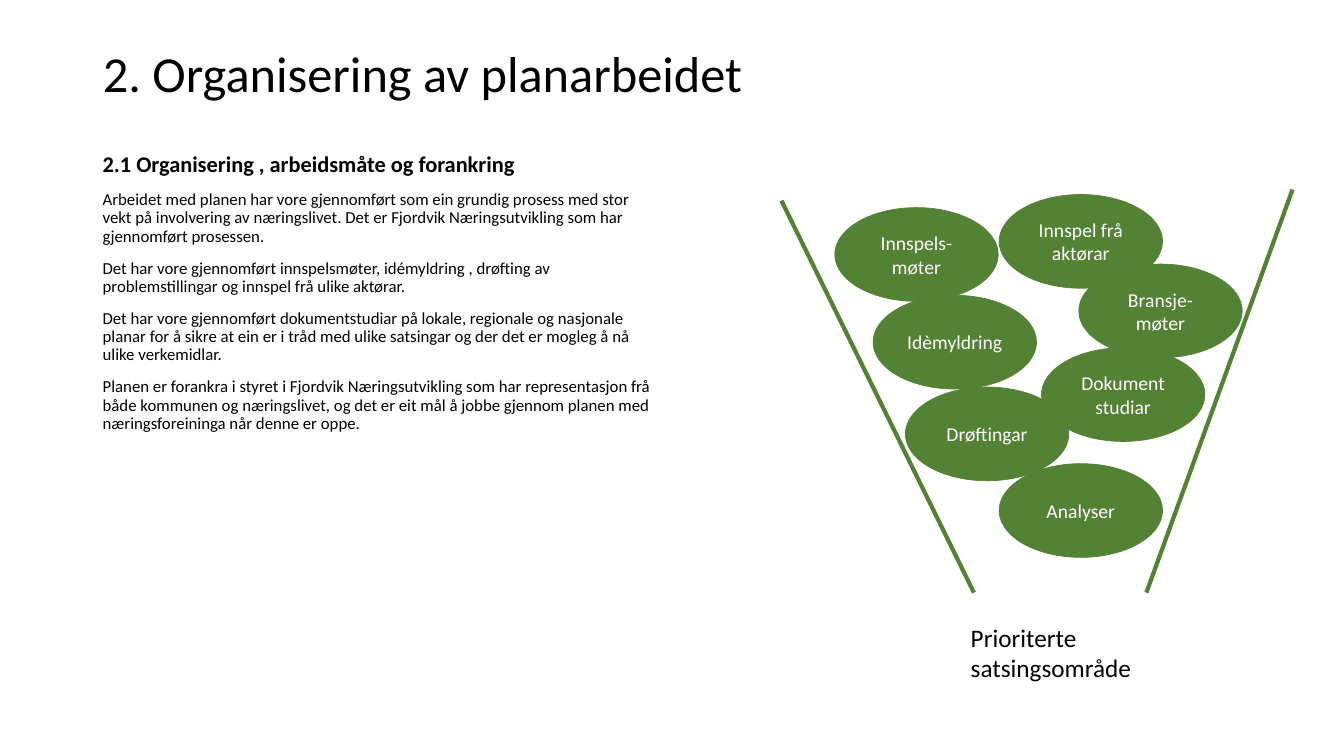
from dataclasses import dataclass

from lxml.etree import SubElement
from pptx import Presentation
from pptx.dml.color import RGBColor as Rgb
from pptx.enum.shapes import MSO_CONNECTOR as Connector, MSO_SHAPE as Preset
from pptx.enum.text import MSO_ANCHOR as Anchor, MSO_AUTO_SIZE as AutoSize, PP_ALIGN as Align
from pptx.oxml.ns import qn
from pptx.util import Inches, Pt


@dataclass(frozen=True)
class Theme:
    font: str = "Calibri"
    ink: Rgb = Rgb(0x00, 0x00, 0x00)
    paper: Rgb = Rgb(0xFF, 0xFF, 0xFF)
    green: Rgb = Rgb(0x54, 0x82, 0x35)
    title: int = 36
    result: int = 18
    heading: int = 16
    bubble: int = 14
    body: int = 12
    outline: float = 0.5
    funnel: int = 3


class SlideBuilder:
    def __init__(self, slide, theme):
        self.slide = slide
        self.theme = theme

    def place(self, shape, left, top, width, height):
        shape.left, shape.top = Inches(left), Inches(top)
        shape.width, shape.height = Inches(width), Inches(height)

    def add_text(self, paragraph, text, size, color, bold=False, align=Align.LEFT):
        paragraph.alignment = align
        run = paragraph.add_run()
        run.text = text
        run.font.name = self.theme.font
        run.font.size = Pt(size)
        run.font.bold = bold
        run.font.color.rgb = color

    def title(self, text, *box):
        heading = self.slide.shapes.title
        self.place(heading, *box)
        frame = heading.text_frame
        frame.auto_size = AutoSize.NONE
        frame.vertical_anchor = Anchor.MIDDLE
        paragraph = frame.paragraphs[0]
        paragraph.line_spacing = 0.9
        self.add_text(paragraph, text, self.theme.title, self.theme.ink)

    def text_frame(self, *box):
        frame = self.slide.shapes.add_textbox(*map(Inches, box)).text_frame
        frame.word_wrap = True
        return frame

    def section(self, heading, body, *box):
        frame = self.text_frame(*box)
        for index, text in enumerate([heading, *body]):
            paragraph = frame.add_paragraph() if index else frame.paragraphs[0]
            paragraph.line_spacing = 0.9
            paragraph.space_before = Pt(10)
            size = self.theme.body if index else self.theme.heading
            self.add_text(paragraph, text, size, self.theme.ink, bold=index == 0)

    def bubble(self, text, *box):
        oval = self.slide.shapes.add_shape(Preset.OVAL, *map(Inches, box))
        oval.shadow.inherit = False
        oval.fill.solid()
        oval.fill.fore_color.rgb = self.theme.green
        oval.line.color.rgb = self.theme.green
        oval.line.width = Pt(self.theme.outline)
        frame = oval.text_frame
        frame.word_wrap = True
        frame.vertical_anchor = Anchor.MIDDLE
        self.add_text(frame.paragraphs[0], text, self.theme.bubble, self.theme.paper,
                      align=Align.CENTER)

    def funnel_side(self, *ends):
        side = self.slide.shapes.add_connector(Connector.STRAIGHT, *map(Inches, ends))
        side.line.color.rgb = self.theme.green
        side.line.width = Pt(self.theme.funnel)
        SubElement(side._element.spPr, qn("a:effectLst"))

    def result(self, text, *box):
        frame = self.text_frame(*box)
        frame.auto_size = AutoSize.SHAPE_TO_FIT_TEXT
        self.add_text(frame.paragraphs[0], text, self.theme.result, self.theme.ink)


BODY = [
    "Arbeidet med planen har vore gjennomført som ein grundig prosess med stor vekt på "
    "involvering av næringslivet. Det er Fjordvik Næringsutvikling som har gjennomført prosessen.",
    "Det har vore gjennomført innspelsmøter, idémyldring , drøfting av problemstillingar og "
    "innspel frå ulike aktørar.",
    "Det har vore gjennomført dokumentstudiar på lokale, regionale og nasjonale planar for å "
    "sikre at ein er i tråd med ulike satsingar og der det er mogleg å nå ulike verkemidlar.",
    "Planen er forankra i styret i Fjordvik Næringsutvikling som har representasjon frå både "
    "kommunen og næringslivet, og det er eit mål å jobbe gjennom planen med næringsforeininga "
    "når denne er oppe.",
]

BUBBLE_SIZE = (1.62, 0.93)
BUBBLES = [
    ("Innspel frå aktørar", 9.91, 1.93),
    ("Innspels-møter", 8.28, 2.06),
    ("Bransje- møter", 10.7, 2.62),
    ("Idèmyldring", 8.66, 2.93),
    ("Drøftingar", 8.98, 3.84),
    ("Dokument studiar", 10.33, 3.45),
    ("Analyser", 9.91, 4.6),
]

FUNNEL_SIDES = [(7.75, 1.99, 9.66, 5.88), (12.82, 1.88, 11.37, 5.88)]


def main():
    deck = Presentation()
    deck.slide_width, deck.slide_height = Inches(13.33), Inches(7.5)
    title_only = deck.slide_layouts.get_by_name("Title Only")
    builder = SlideBuilder(deck.slides.add_slide(title_only), Theme())

    builder.title("2. Organisering av planarbeidet", 0.92, 0.37, 11.5, 0.78)
    builder.section("2.1 Organisering , arbeidsmåte og forankring", BODY,
                    0.92, 1.47, 5.67, 4.76)
    for text, left, top in BUBBLES:
        builder.bubble(text, left, top, *BUBBLE_SIZE)
    for ends in FUNNEL_SIDES:
        builder.funnel_side(*ends)
    builder.result("Prioriterte satsingsområde", 9.53, 6.12, 2, 0.71)

    deck.save("out.pptx")


if __name__ == "__main__":
    main()
